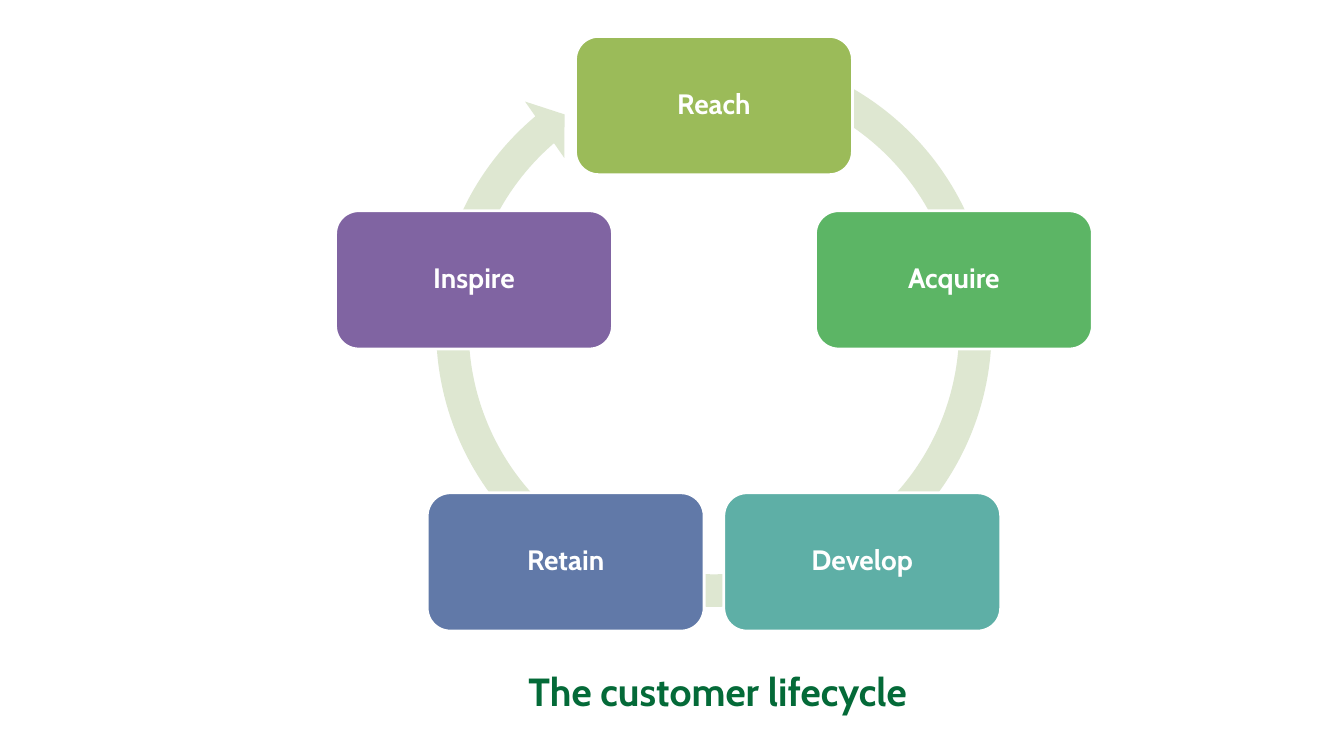
import math
import pptx
import pptx.util
import pptx.dml.color
import pptx.enum.shapes
import pptx.enum.text

Pt = pptx.util.Pt
RGB = pptx.dml.color.RGBColor
KIND = pptx.enum.shapes.MSO_SHAPE
ANCHOR = pptx.enum.text.MSO_ANCHOR
ALIGN = pptx.enum.text.PP_ALIGN

WHITE = RGB(0xFF, 0xFF, 0xFF)
GREEN = RGB(0x04, 0x6A, 0x38)
PALE = RGB(0xDE, 0xE7, 0xD1)

TITLE = "The customer lifecycle"
STAGES = [
    ("Reach", RGB(0x9B, 0xBB, 0x59)),
    ("Acquire", RGB(0x5C, 0xB5, 0x65)),
    ("Develop", RGB(0x5E, 0xAF, 0xA6)),
    ("Retain", RGB(0x61, 0x79, 0xA8)),
    ("Inspire", RGB(0x80, 0x64, 0xA2)),
]

MID_X, MID_Y, RADIUS = 510, 255.6, 180.2
BOX_W, BOX_H = 197.8, 98.8
RING_Y, RING_D = 235.1, 422.6
RING_ADJ = (0.055, 3.307, 137.803, 173.833, 0.058)

FRAME = {"word_wrap": True, "vertical_anchor": ANCHOR.MIDDLE}
HEAD = {"word_wrap": True, "vertical_anchor": ANCHOR.BOTTOM}
LABEL = {"name": "Cabin", "size": Pt(20), "bold": True}
BIG = {"name": "Cabin", "size": Pt(28), "bold": True}


def apply(item, values):
    for name, value in values.items():
        setattr(item, name, value)


def write(shape, text, frame, font, color):
    apply(shape.text_frame, frame)
    para = shape.text_frame.paragraphs[0]
    para.alignment = ALIGN.CENTER
    run = para.add_run()
    run.text = text
    apply(run.font, font)
    run.font.color.rgb = color
    return para


def draw(slide, kind, mid, size, color):
    (x, y), (w, h) = mid, size
    shape = slide.shapes.add_shape(
        kind, Pt(x - w / 2), Pt(y - h / 2), Pt(w), Pt(h))
    shape.shadow.inherit = False
    shape.fill.solid()
    shape.fill.fore_color.rgb = color
    return shape


def main():
    deck = pptx.Presentation()
    apply(deck, {"slide_width": Pt(960), "slide_height": Pt(540)})
    slide = deck.slides.add_slide(deck.slide_layouts[6])

    title = slide.shapes.add_textbox(Pt(224.6), Pt(469.4), Pt(576), Pt(44.6))
    write(title, TITLE, HEAD, BIG, GREEN)

    ring = draw(slide, KIND.CIRCULAR_ARROW, (MID_X, RING_Y),
                (RING_D, RING_D), PALE)
    ring.line.fill.background()
    for i, value in enumerate(RING_ADJ):
        ring.adjustments[i] = value

    for i, (name, color) in enumerate(STAGES):
        turn = math.tau * i / len(STAGES)
        mid = (MID_X + RADIUS * math.sin(turn),
               MID_Y - RADIUS * math.cos(turn))
        box = draw(slide, KIND.ROUNDED_RECTANGLE, mid, (BOX_W, BOX_H), color)
        box.line.color.rgb = WHITE
        box.line.width = Pt(2)
        para = write(box, name, FRAME, LABEL, WHITE)
        para.line_spacing = 0.9

    deck.save("out.pptx")


if __name__ == "__main__":
    main()
